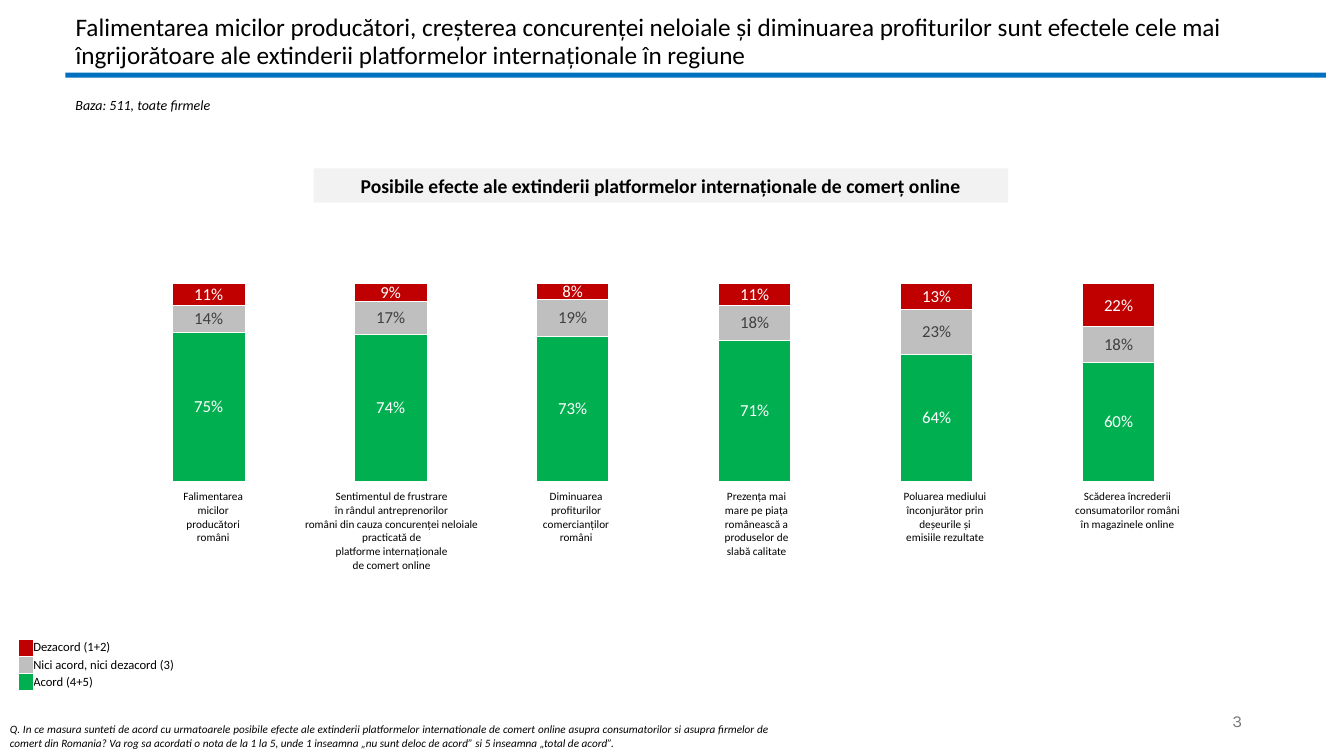
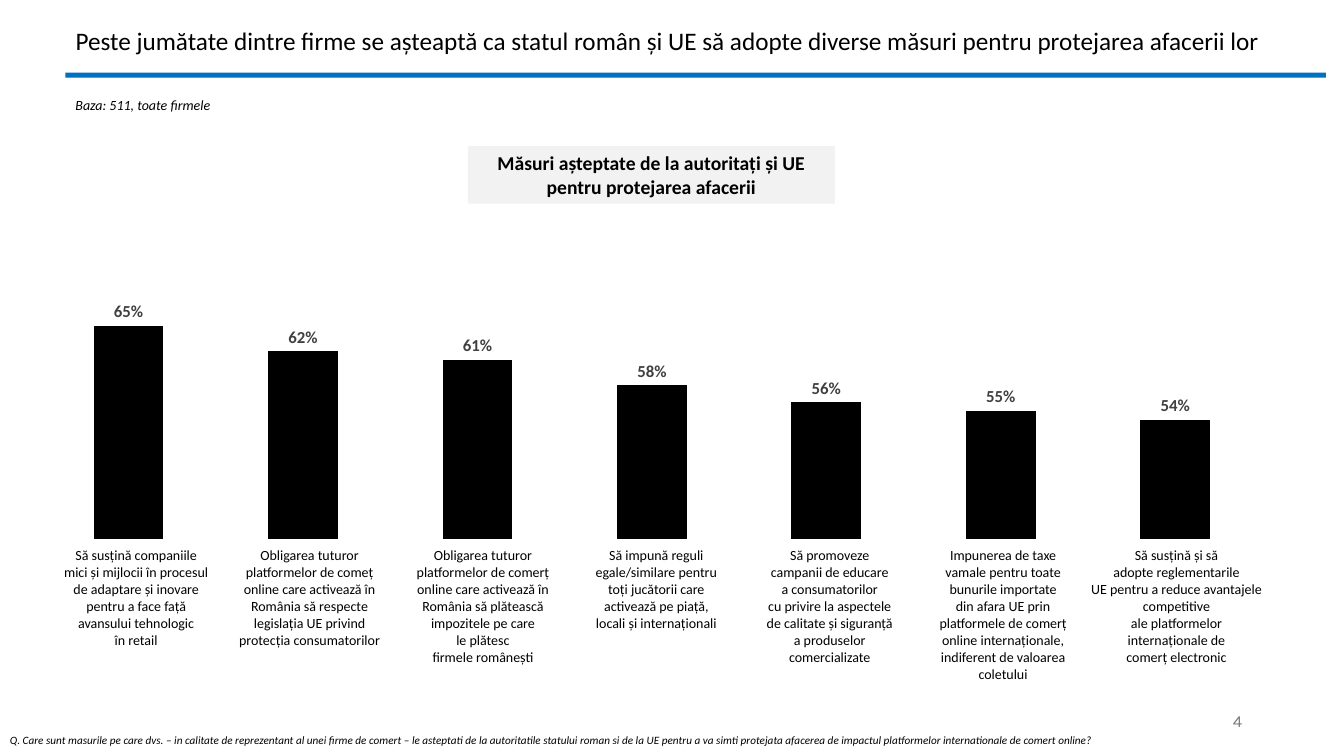
from dataclasses import dataclass
from typing import NamedTuple

import lxml.etree
import pptx
import pptx.chart.data
import pptx.dml.color
import pptx.enum.chart
import pptx.enum.shapes
import pptx.enum.text
import pptx.oxml
import pptx.oxml.ns
import pptx.util

EMU_PER_PX = 9144  # 100 px to the inch
FONT = "Calibri"
FONT_ALT = "Karla"
PERCENT = "###0%"
COLORS = {
    "text": "000000",
    "rule": "0070C0",
    "band": "F2F2F2",
    "agree": "00B050",
    "neutral": "BFBFBF",
    "disagree": "C00000",
    "label": "404040",
    "number": "797979",
    "white": "FFFFFF",
    "bar": "000000",
}
ALIGN = pptx.enum.text.PP_ALIGN
ANCHOR = pptx.enum.text.MSO_ANCHOR
CHART = pptx.enum.chart.XL_CHART_TYPE
LABEL = pptx.enum.chart.XL_LABEL_POSITION


class Box(NamedTuple):
    x: int
    y: int
    w: int
    h: int


class Series(NamedTuple):
    values: list[float]
    fill: str
    label: str


@dataclass
class BarChart:
    kind: CHART
    box: Box
    plot: tuple[float, float, float, float]
    scale: tuple[float, float]
    series: list[Series]
    label_position: LABEL
    outlined: bool = False
    bold: bool = False


@dataclass
class Captions:
    box: Box
    widths: list[int]
    size: int
    texts: list[str]


@dataclass
class Page:
    number: int
    title: str
    band: str
    band_box: Box
    question: str
    question_box: Box
    chart: BarChart
    captions: Captions


PAGES = [
    Page(
        3,
        "Falimentarea micilor producători, creșterea concurenței neloiale și diminuarea profiturilor "
        "sunt efectele cele mai îngrijorătoare ale extinderii platformelor internaționale în regiune",
        "Posibile efecte ale extinderii platformelor internaționale de comerț online",
        Box(311, 167, 689, 34),
        "Q. In ce masura sunteti de acord cu urmatoarele posibile efecte ale extinderii platformelor "
        "internationale de comert online asupra consumatorilor si asupra firmelor de comert din Romania? "
        "Va rog sa acordati o nota de la 1 la 5, unde 1 inseamna „nu sunt deloc de acord” si 5 inseamna "
        "„total de acord”.",
        Box(0, 712, 774, 37),
        BarChart(
            CHART.COLUMN_STACKED,
            Box(108, 230, 1095, 388),
            (0.008, 0.031, 0.989, 0.607),
            (0, 1.2),
            [
                Series([0.75, 0.74, 0.73, 0.71, 0.64, 0.6], "agree", "white"),
                Series([0.14, 0.17, 0.19, 0.18, 0.23, 0.18], "neutral", "label"),
                Series([0.11, 0.09, 0.08, 0.11, 0.13, 0.22], "disagree", "white"),
            ],
            LABEL.CENTER,
            outlined=True,
        ),
        Captions(
            Box(123, 485, 1075, 81),
            [177, 177, 189, 169, 205, 157],
            8,
            [
                "Falimentarea\nmicilor\nproducători\nromâni",
                "Sentimentul de frustrare\nîn rândul antreprenorilor\n"
                "români din cauza concurenței neloiale practicată de\n"
                "platforme internaționale\nde comerț online",
                "Diminuarea\nprofiturilor\ncomercianților\nromâni",
                "Prezența mai\nmare pe piața\nromânească a\nproduselor de\nslabă calitate",
                "Poluarea mediului\nînconjurător prin\ndeșeurile și\nemisiile rezultate",
                "Scăderea încrederii consumatorilor români\nîn magazinele online",
            ],
        ),
    ),
    Page(
        4,
        "Peste jumătate dintre firme se așteaptă ca statul român și UE să adopte diverse măsuri "
        "pentru protejarea afacerii lor",
        "Măsuri așteptate de la autoritați și UE pentru protejarea afacerii",
        Box(464, 145, 364, 57),
        "Q. Care sunt masurile pe care dvs. – in calitate de reprezentant al unei firme de comert – le "
        "asteptati de la autoritatile statului roman si de la UE pentru a va simti protejata afacerea de "
        "impactul platformelor internationale de comert online?",
        Box(0, 723, 1196, 24),
        BarChart(
            CHART.COLUMN_CLUSTERED,
            Box(21, 188, 1250, 521),
            (0.016, 0.017, 0.969, 0.648),
            (0.4, 0.8),
            [Series([0.65, 0.62, 0.61, 0.58, 0.56, 0.55, 0.54], "bar", "label")],
            LABEL.OUTSIDE_END,
            bold=True,
        ),
        Captions(
            Box(49, 542, 1207, 134),
            [172] * 7,
            10,
            [
                "Să susțină companiile\nmici și mijlocii în procesul\nde adaptare și inovare\n"
                "pentru a face față\navansului tehnologic\nîn retail",
                "Obligarea tuturor platformelor de comeț\nonline care activează în România să respecte\n"
                "legislația UE privind\nprotecția consumatorilor",
                "Obligarea tuturor platformelor de comerț\nonline care activează în România să plătească "
                "impozitele pe care\nle plătesc\nfirmele românești",
                "Să impună reguli egale/similare pentru\ntoți jucătorii care\nactivează pe piață,\n"
                "locali și internaționali",
                "Să promoveze\ncampanii de educare\na consumatorilor\ncu privire la aspectele\n"
                "de calitate și siguranță\na produselor\ncomercializate",
                "Impunerea de taxe\nvamale pentru toate\nbunurile importate\ndin afara UE prin\n"
                "platformele de comerț\nonline internaționale, indiferent de valoarea coletului",
                "Să susțină și să\nadopte reglementarile\nUE pentru a reduce avantajele competitive\n"
                "ale platformelor internaționale de\ncomerț electronic",
            ],
        ),
    ),
]
LEGEND = [
    ("disagree", "Dezacord (1+2)"),
    ("neutral", "Nici acord, nici dezacord (3)"),
    ("agree", "Acord (4+5)"),
]


def px(n: int) -> pptx.util.Emu:
    return pptx.util.Emu(n * EMU_PER_PX)


def place(box: Box) -> list:
    return [px(n) for n in box]


def rgb(color: str):
    return pptx.dml.color.RGBColor.from_string(COLORS[color])


def set_font(font, size: int, color: str = "text", name: str = FONT, bold=False, italic=False) -> None:
    font.size = pptx.util.Pt(size)
    font.name = name
    font.bold = bold
    font.italic = italic
    font.color.rgb = rgb(color)


def write(tf, text: str, size: int, align=ALIGN.LEFT, **font) -> None:
    tf.text = text
    for p in tf.paragraphs:
        p.alignment = align
        for r in p.runs:
            set_font(r.font, size, **font)


def add_text(s, box: Box, text: str, size: int, wrap=True, anchor=ANCHOR.TOP, **style) -> None:
    tf = s.shapes.add_textbox(*place(box)).text_frame
    tf.word_wrap = wrap
    tf.vertical_anchor = anchor
    write(tf, text, size, **style)


def add_rect(s, box: Box, color: str):
    sp = s.shapes.add_shape(pptx.enum.shapes.MSO_SHAPE.RECTANGLE, *place(box))
    sp.shadow.inherit = False
    sp.fill.solid()
    sp.fill.fore_color.rgb = rgb(color)
    sp.line.fill.background()
    return sp


def add_plain_table(s, box: Box, rows: int, widths: list[int]):
    table = s.shapes.add_table(rows, len(widths), *place(box)).table
    table.first_row = False
    table.horz_banding = False
    for column, width in zip(table.columns, widths):
        column.width = px(width)
    return table


def set_margins(cell, side: int, bottom: int = 0) -> None:
    cell.margin_left = cell.margin_right = cell.margin_top = px(side)
    cell.margin_bottom = px(bottom)


def add_captions(s, captions: Captions) -> None:
    table = add_plain_table(s, captions.box, 1, captions.widths)
    for cell, text in zip(table.rows[0].cells, captions.texts):
        set_margins(cell, 1)
        cell.fill.background()
        write(cell.text_frame, text, captions.size, align=ALIGN.CENTER)


def add_white_borders(cell) -> None:
    tc_pr = cell._tc.get_or_add_tcPr()
    for side in ("lnL", "lnR", "lnT", "lnB"):
        tc_pr.append(pptx.oxml.parse_xml(
            f'<a:{side} {pptx.oxml.ns.nsdecls("a")} w="12700"><a:solidFill>'
            f'<a:srgbClr val="{COLORS["white"]}"/></a:solidFill></a:{side}>'))


def add_legend(s) -> None:
    table = add_plain_table(s, Box(18, 634, 162, 51), len(LEGEND), [15, 147])
    for row, (color, text) in zip(table.rows, LEGEND):
        swatch, label = row.cells
        for cell in row.cells:
            set_margins(cell, 0)
            cell.vertical_anchor = ANCHOR.MIDDLE
            add_white_borders(cell)
        swatch.fill.solid()
        swatch.fill.fore_color.rgb = rgb(color)
        # Keeps the empty cell from growing to the default text size
        end = lxml.etree.SubElement(swatch.text_frame.paragraphs[0]._p, pptx.oxml.ns.qn("a:endParaRPr"))
        end.set("sz", "900")
        label.fill.background()
        write(label.text_frame, text, 9)


def set_plot_layout(chart, fractions: tuple[float, float, float, float]) -> None:
    """Fix the inner plot area as fractions of the chart: left, top, width, height."""
    area = chart._chartSpace.chart.plotArea
    for old in area.findall(pptx.oxml.ns.qn("c:layout")):
        area.remove(old)
    sizes = "".join(f'<c:{tag} val="{v}"/>' for tag, v in zip("xywh", fractions))
    area.insert(0, pptx.oxml.parse_xml(
        f'<c:layout {pptx.oxml.ns.nsdecls("c")}><c:manualLayout><c:layoutTarget val="inner"/>'
        f'<c:xMode val="edge"/><c:yMode val="edge"/>{sizes}</c:manualLayout></c:layout>'))


def add_bars(s, bars: BarChart) -> None:
    data = pptx.chart.data.CategoryChartData(number_format=PERCENT)
    data.categories = [str(i + 1) for i in range(len(bars.series[0].values))]
    for i, series in enumerate(bars.series, 1):
        data.add_series(f"Series {i}", series.values)
    chart = s.shapes.add_chart(bars.kind, *place(bars.box), data).chart
    set_font(chart.font, 10, name=FONT_ALT)
    chart.has_title = False
    chart.has_legend = False
    chart.category_axis.visible = False
    axis = chart.value_axis
    axis.visible = False
    axis.has_major_gridlines = False
    axis.minimum_scale, axis.maximum_scale = bars.scale
    axis.major_unit = 0.2
    plot = chart.plots[0]
    plot.gap_width = 150
    plot.overlap = 100 if bars.kind == CHART.COLUMN_STACKED else 0
    plot.vary_by_categories = False
    for ser, series in zip(plot.series, bars.series):
        ser.format.fill.solid()
        ser.format.fill.fore_color.rgb = rgb(series.fill)
        if bars.outlined:
            ser.format.line.color.rgb = rgb("white")
            ser.format.line.width = pptx.util.Pt(0.75)
        labels = ser.data_labels
        labels.show_value = True
        labels.number_format = PERCENT
        labels.number_format_is_linked = False
        labels.position = bars.label_position
        set_font(labels.font, 12, series.label, bold=bars.bold)
    set_plot_layout(chart, bars.plot)


def add_title(s, text: str) -> None:
    title = s.shapes.title
    title.left, title.top, title.width, title.height = place(Box(65, 12, 1250, 60))
    tf = title.text_frame
    tf.word_wrap = True
    tf.auto_size = pptx.enum.text.MSO_AUTO_SIZE.NONE
    tf.vertical_anchor = ANCHOR.MIDDLE
    write(tf, text, 18)
    tf.paragraphs[0].line_spacing = 0.9
    add_rect(s, Box(65, 72, 1250, 5), "rule")


def add_page(prs, page: Page):
    s = prs.slides.add_slide(prs.slide_layouts.get_by_name("Title Only"))
    add_title(s, page.title)
    add_text(s, page.question_box, page.question, 8, align=ALIGN.JUSTIFY, italic=True)
    add_text(s, Box(65, 91, 156, 27), "Baza: 511, toate firmele", 10, wrap=False, italic=True)
    add_text(s, Box(942, 695, 300, 40), str(page.number), 12, anchor=ANCHOR.MIDDLE,
             align=ALIGN.RIGHT, color="number", name=FONT_ALT)
    add_bars(s, page.chart)
    add_captions(s, page.captions)
    tf = add_rect(s, page.band_box, "band").text_frame
    tf.word_wrap = True
    write(tf, page.band, 14, align=ALIGN.CENTER, bold=True)
    return s


def main() -> None:
    prs = pptx.Presentation()
    prs.slide_width, prs.slide_height = px(1333), px(750)
    effects, _ = [add_page(prs, page) for page in PAGES]
    add_legend(effects)
    prs.save("out.pptx")


if __name__ == "__main__":
    main()
